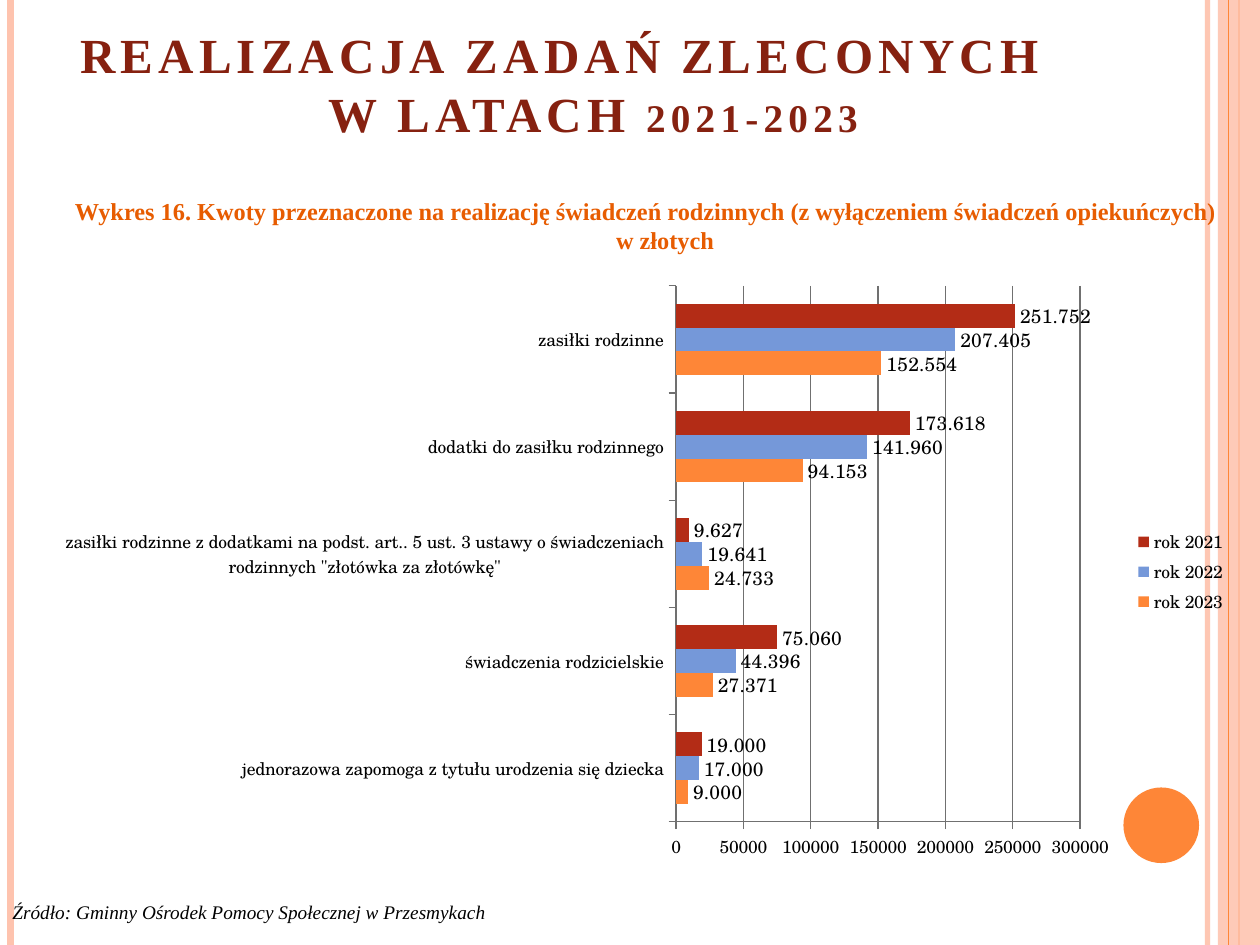
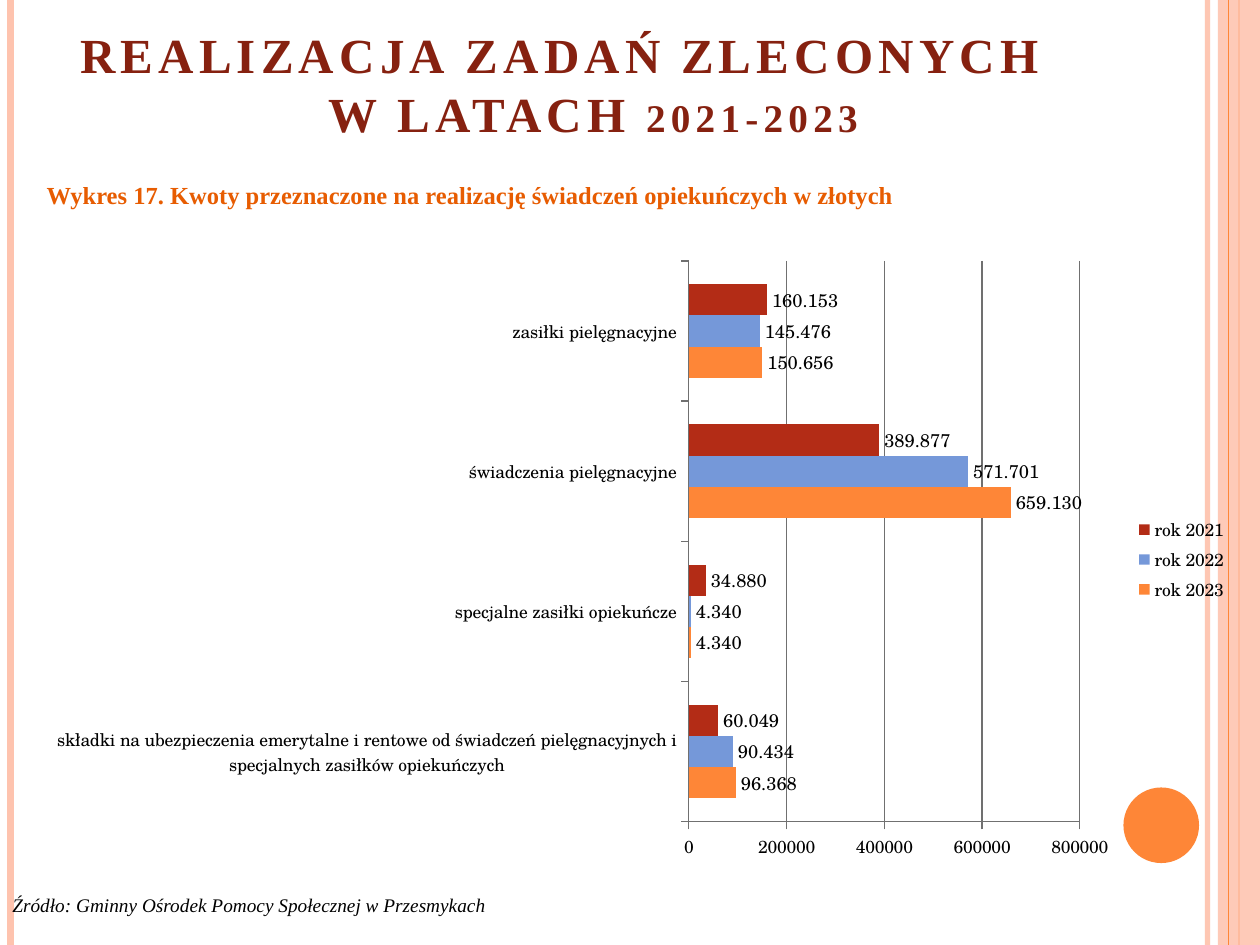
from lxml import etree
from pptx import Presentation
from pptx.chart import data as chart_data
from pptx.dml.color import RGBColor
from pptx.enum import chart as charts, shapes, text
from pptx.oxml import ns
from pptx.util import Pt

COLORS = {
    "title": "862110", "heading": "E75C01", "ink": "000000", "axis": "707070",
    "pale": "FEC3AE", "orange": "FE8637", "blue": "7598D9", "red": "B32C16",
}
SERIF = "Times New Roman"
CHART_FONT = "TeX Gyre Schola"
HEIGHT = 540
TITLE = "REALIZACJA ZADAŃ ZLECONYCH \vW LATACH 2021-2023"
SOURCE = "Źródło: Gminny Ośrodek Pomocy Społecznej w Przesmykach"
# Series run from the bottom bar of each group to the top one
YEARS = [("rok 2023", "orange"), ("rok 2022", "blue"), ("rok 2021", "red")]


def color(name):
    return RGBColor.from_string(COLORS[name])


def add_child(parent, tag, **attributes):
    child = etree.SubElement(parent, ns.qn(tag))
    for key, value in attributes.items():
        child.set(key, str(value))
    return child


class ReportDeck:
    def __init__(self):
        self.deck = Presentation()
        self.deck.slide_width, self.deck.slide_height = Pt(720), Pt(HEIGHT)
        self.page = None

    def new_page(self):
        self.page = self.deck.slides.add_slide(self.deck.slide_layouts[1])

    # Text
    def place(self, box, frame):
        box.left, box.top, box.width, box.height = map(Pt, frame)

    def style(self, para, size, name, **flags):
        for span in para.runs:
            font = span.font
            font.name, font.size = SERIF, Pt(size)
            font.color.rgb = color(name)
            for flag, value in flags.items():
                setattr(font, flag, value)

    def title(self, words):
        box = self.page.shapes.title
        self.place(box, (24, 18.5, 684, 66.5))
        frame = box.text_frame
        frame.text = words
        frame.auto_size = text.MSO_AUTO_SIZE.NONE
        frame.vertical_anchor = text.MSO_ANCHOR.BOTTOM
        para = frame.paragraphs[0]
        para.alignment = text.PP_ALIGN.CENTER
        self.style(para, 28, "title", bold=True)
        for span in para.runs:
            properties = span.font._element
            properties.set("cap", "small")
            properties.set("spc", "300")

    def heading(self, words, frame, size, align):
        box = self.page.placeholders[1]
        self.place(box, frame)
        box.text_frame.text = words
        box.text_frame.auto_size = text.MSO_AUTO_SIZE.NONE
        para = box.text_frame.paragraphs[0]
        para.alignment = align
        para.space_before = Pt(6)
        properties = para._p.get_or_add_pPr()
        properties.set("marL", str(Pt(21.6)))
        properties.set("indent", str(-Pt(21.6)))
        add_child(properties, "a:buNone")
        self.style(para, size, "heading", bold=True)

    def source(self, words, top):
        box = self.page.shapes.add_textbox(Pt(0), Pt(top), Pt(360), Pt(21))
        box.text_frame.word_wrap = True
        box.text_frame.text = words
        self.style(box.text_frame.paragraphs[0], 11, "ink", italic=True)

    # Decoration
    def set_alpha(self, shape, percent):
        fill = next(shape.element.iter(ns.qn("a:srgbClr")))
        add_child(fill, "a:alpha", val=percent * 1000)

    def stripe(self, x, width, name):
        line = self.page.shapes.add_connector(
            shapes.MSO_CONNECTOR.STRAIGHT, Pt(x), Pt(0), Pt(x), Pt(HEIGHT))
        line.line.color.rgb = color(name)
        line.line.width = Pt(width)
        add_child(line.element.spPr, "a:effectLst")
        return line

    def block(self, kind, frame, name):
        shape = self.page.shapes.add_shape(kind, *map(Pt, frame))
        shape.shadow.inherit = False
        shape.fill.solid()
        shape.fill.fore_color.rgb = color(name)
        shape.line.fill.background()
        return shape

    def decorate_master(self):
        """Draw the side bands on the current page and move them to the master."""
        inner = self.stripe(690, 3, "pale")
        left = self.stripe(6, 4.5, "pale")
        wide = self.stripe(708, 1.5, "orange")
        band = self.block(shapes.MSO_SHAPE.RECTANGLE, (696, 0, 24, HEIGHT), "pale")
        thin = self.stripe(702, 0.75, "orange")
        disc = self.block(shapes.MSO_SHAPE.OVAL, (642, 450, 43.2, 43.2), "orange")
        self.set_alpha(inner, 93)
        self.set_alpha(band, 87)
        tree = self.deck.slide_master.shapes.element
        for number, part in enumerate((inner, left, wide, band, thin, disc), 20):
            next(part.element.iter(ns.qn("p:cNvPr"))).set("id", str(number))
            tree.append(part.element)

    # Chart
    def bar_chart(self, frame, plot_area, rows, step, top_value, label_size):
        data = chart_data.CategoryChartData()
        data.categories = [category for category, _ in rows]
        columns = list(zip(*(values for _, values in rows)))
        for (year, _), values in zip(YEARS, columns):
            data.add_series(year, values)
        chart = self.page.shapes.add_chart(
            charts.XL_CHART_TYPE.BAR_CLUSTERED, *map(Pt, frame), data).chart
        chart.has_title = False
        chart.font.name, chart.font.size = CHART_FONT, Pt(18)
        chart.font.color.rgb = color("ink")
        chart.has_legend = True
        chart.legend.position = charts.XL_LEGEND_POSITION.RIGHT
        chart.legend.include_in_layout = False
        chart.legend.font.size = Pt(10)
        self.axes(chart, step, top_value)
        plot = chart.plots[0]
        plot.gap_width, plot.overlap = 150, 0
        plot.vary_by_categories = False
        for series, (_, name), values in zip(plot.series, YEARS, columns):
            series.format.fill.solid()
            series.format.fill.fore_color.rgb = color(name)
            self.bar_labels(series, values, label_size)
        self.fix_plot_area(chart, frame, plot_area)

    def axes(self, chart, step, top_value):
        values = chart.value_axis
        values.minimum_scale, values.maximum_scale = 0, top_value
        values.major_unit = step
        values.has_major_gridlines = True
        values.tick_labels.number_format = "General"
        values.tick_labels.number_format_is_linked = False
        lines = [values.major_gridlines.format.line]
        for axis in (chart.category_axis, values):
            axis.major_tick_mark = charts.XL_TICK_MARK.OUTSIDE
            axis.tick_labels.font.size = Pt(10)
            lines.append(axis.format.line)
        for line in lines:
            line.color.rgb = color("axis")
            line.width = Pt(0.75)

    def bar_labels(self, series, values, size):
        labels = series.data_labels
        labels.show_value = True
        labels.position = charts.XL_LABEL_POSITION.OUTSIDE_END
        labels.font.size = Pt(size)
        for index, value in enumerate(values):
            label = series.points[index].data_label
            label.text_frame.text = f"{value:,}".replace(",", ".")
            font = label.text_frame.paragraphs[0].runs[0].font
            font.name, font.size = CHART_FONT, Pt(size)
            font.color.rgb = color("ink")
            label.position = charts.XL_LABEL_POSITION.OUTSIDE_END

    def fix_plot_area(self, chart, frame, plot_area):
        left, top, width, height = frame
        x, y, w, h = plot_area
        area = next(chart.element.iter(ns.qn("c:plotArea")))
        for old in area.findall(ns.qn("c:layout")):
            area.remove(old)
        layout = etree.Element(ns.qn("c:layout"))
        area.insert(0, layout)
        manual = add_child(layout, "c:manualLayout")
        add_child(manual, "c:layoutTarget", val="inner")
        for mode in ("xMode", "yMode"):
            add_child(manual, f"c:{mode}", val="edge")
        shares = {"x": (x - left) / width, "y": (y - top) / height,
                  "w": w / width, "h": h / height}
        for tag, share in shares.items():
            add_child(manual, f"c:{tag}", val=round(share, 4))


# Values follow the order of YEARS
FAMILY_BENEFITS = [
    ("jednorazowa zapomoga z tytułu urodzenia się dziecka", (9000, 17000, 19000)),
    ("świadczenia rodzicielskie", (27371, 44396, 75060)),
    ("zasiłki rodzinne z dodatkami na podst. art.. 5 ust. 3 ustawy o świadczeniach "
     'rodzinnych "złotówka za złotówkę"', (24733, 19641, 9627)),
    ("dodatki do zasiłku rodzinnego", (94153, 141960, 173618)),
    ("zasiłki rodzinne", (152554, 207405, 251752)),
]
CARE_BENEFITS = [
    ("składki na ubezpieczenia emerytalne i rentowe od świadczeń pielęgnacyjnych i "
     "specjalnych zasiłków opiekuńczych", (96368, 90434, 60049)),
    ("specjalne zasiłki opiekuńcze", (4340, 4340, 34880)),
    ("świadczenia pielęgnacyjne", (659130, 571701, 389877)),
    ("zasiłki pielęgnacyjne", (150656, 145476, 160153)),
]


def main():
    report = ReportDeck()

    # Family benefits
    report.new_page()
    report.decorate_master()
    report.title(TITLE)
    report.heading("Wykres 16. Kwoty przeznaczone na realizację świadczeń rodzinnych "
                   "(z wyłączeniem świadczeń opiekuńczych) w złotych",
                   (33, 108.5, 672.5, 39.5), 13.9, text.PP_ALIGN.CENTER)
    report.bar_chart((24, 156, 684, 341.5), (386.3, 163.4, 230.9, 306.3),
                     FAMILY_BENEFITS, 50000, 300000, 11)
    report.source(SOURCE, 511)

    # Care benefits
    report.new_page()
    report.title(TITLE)
    report.heading("Wykres 17. Kwoty przeznaczone na realizację świadczeń "
                   "opiekuńczych w złotych",
                   (19.5, 99.5, 691, 35.5), 14, text.PP_ALIGN.LEFT)
    report.bar_chart((19.5, 142, 689, 355.5), (393.7, 149.1, 223.4, 320.6),
                     CARE_BENEFITS, 200000, 800000, 10.5)
    report.source(SOURCE, 507)

    report.deck.save("out.pptx")


if __name__ == "__main__":
    main()
